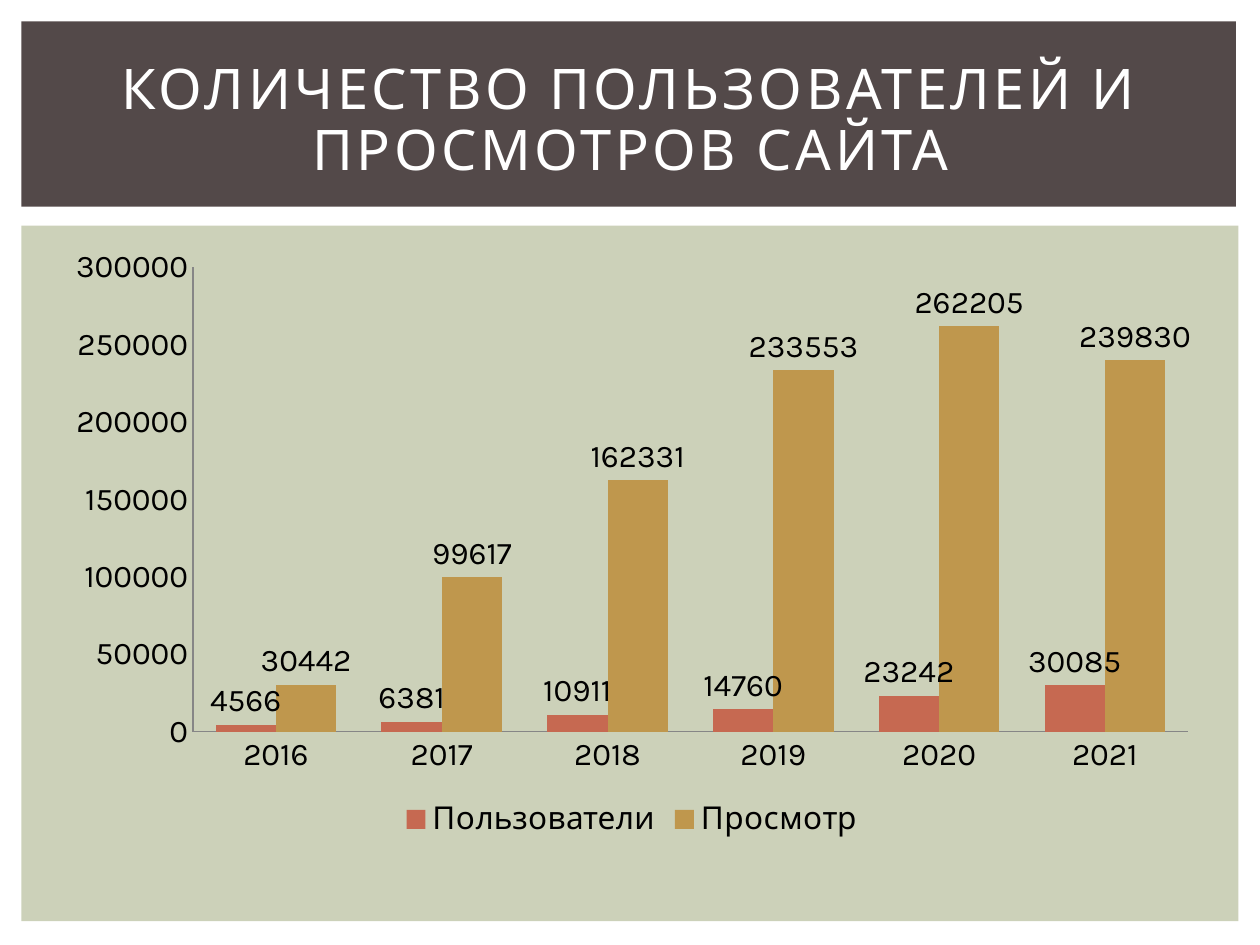
from pptx import Presentation
from pptx.chart.data import CategoryChartData
from pptx.dml.color import RGBColor
from pptx.enum.chart import XL_CHART_TYPE as ChartType
from pptx.enum.chart import XL_LABEL_POSITION as LabelPosition
from pptx.enum.chart import XL_LEGEND_POSITION as LegendPosition
from pptx.enum.chart import XL_TICK_MARK as TickMark
from pptx.enum.shapes import MSO_SHAPE as Shape
from pptx.enum.text import MSO_ANCHOR as Anchor
from pptx.enum.text import PP_ALIGN as Align
from pptx.util import Inches, Pt

WHITE = RGBColor(0xFF, 0xFF, 0xFF)
BLACK = RGBColor(0x00, 0x00, 0x00)
SAGE = RGBColor(0xCC, 0xD1, 0xB9)
BROWN = RGBColor(0x53, 0x49, 0x49)
RED = RGBColor(0xC6, 0x69, 0x51)
GOLD = RGBColor(0xBF, 0x97, 0x4D)
GRAY = RGBColor(0x86, 0x86, 0x86)

YEARS = ["2016", "2017", "2018", "2019", "2020", "2021"]
SERIES = [
    ("Пользователи", RED, [4566, 6381, 10911, 14760, 23242, 30085]),
    ("Просмотр", GOLD, [30442, 99617, 162331, 233553, 262205, 239830]),
]


class SlideBuilder:
    """Places elements on a grid of 100 columns by 75 rows."""

    font_name = "Karla"
    title_size = Pt(32)
    chart_size = Pt(18)

    def __init__(self, deck):
        self.slide = deck.slides.add_slide(deck.slide_layouts[6])
        self.column = deck.slide_width / 100
        self.row = deck.slide_height / 75

    def area(self, left, top, width, height):
        return (round(left * self.column), round(top * self.row),
                round(width * self.column), round(height * self.row))

    def style_font(self, font, size, color):
        font.name = self.font_name
        font.size = size
        font.color.rgb = color

    def panel(self, color, *place):
        panel = self.slide.shapes.add_shape(Shape.RECTANGLE, *self.area(*place))
        panel.shadow.inherit = False
        panel.fill.solid()
        panel.fill.fore_color.rgb = color
        panel.line.fill.background()

    def title(self, text, *place):
        frame = self.slide.shapes.add_textbox(*self.area(*place)).text_frame
        frame.word_wrap = True
        frame.vertical_anchor = Anchor.MIDDLE
        frame.text = text
        para = frame.paragraphs[0]
        para.alignment = Align.CENTER
        para.line_spacing = 0.9
        span = para.runs[0]
        self.style_font(span.font, self.title_size, WHITE)
        span.font._element.set("spc", "200")  # letter spacing of 2 pt

    def column_chart(self, categories, series, *place):
        data = CategoryChartData()
        data.categories = categories
        for name, _, values in series:
            data.add_series(name, values)
        chart = self.slide.shapes.add_chart(
            ChartType.COLUMN_CLUSTERED, *self.area(*place), data).chart
        self.style_font(chart.font, self.chart_size, BLACK)
        chart.has_title = False
        chart.has_legend = True
        chart.legend.position = LegendPosition.BOTTOM
        chart.legend.include_in_layout = False

        for axis in (chart.category_axis, chart.value_axis):
            axis.has_major_gridlines = False
            axis.major_tick_mark = axis.minor_tick_mark = TickMark.NONE
            axis.format.line.color.rgb = GRAY
            axis.format.line.width = Pt(0.75)
        chart.value_axis.minimum_scale = 0
        chart.value_axis.maximum_scale = 300000
        chart.value_axis.major_unit = 50000

        plot = chart.plots[0]
        plot.gap_width = 75
        plot.overlap = 0
        plot.vary_by_categories = False
        for bars, (_, color, _) in zip(plot.series, series):
            bars.format.fill.solid()
            bars.format.fill.fore_color.rgb = color
            labels = bars.data_labels
            labels.show_value = True
            labels.position = LabelPosition.OUTSIDE_END
            self.style_font(labels.font, self.chart_size, BLACK)


def main():
    deck = Presentation()
    deck.slide_width, deck.slide_height = Inches(10), Inches(7.5)
    page = SlideBuilder(deck)
    page.panel(SAGE, 1.7, 17.9, 96.6, 55.2)
    page.panel(BROWN, 1.7, 1.7, 96.4, 14.7)
    page.column_chart(YEARS, SERIES, 4.2, 18.8, 91.9, 48.2)
    page.title("КОЛИЧЕСТВО ПОЛЬЗОВАТЕЛЕЙ И ПРОСМОТРОВ САЙТА",
               4.2, 3.9, 91.7, 11.5)
    deck.save("out.pptx")


if __name__ == "__main__":
    main()
